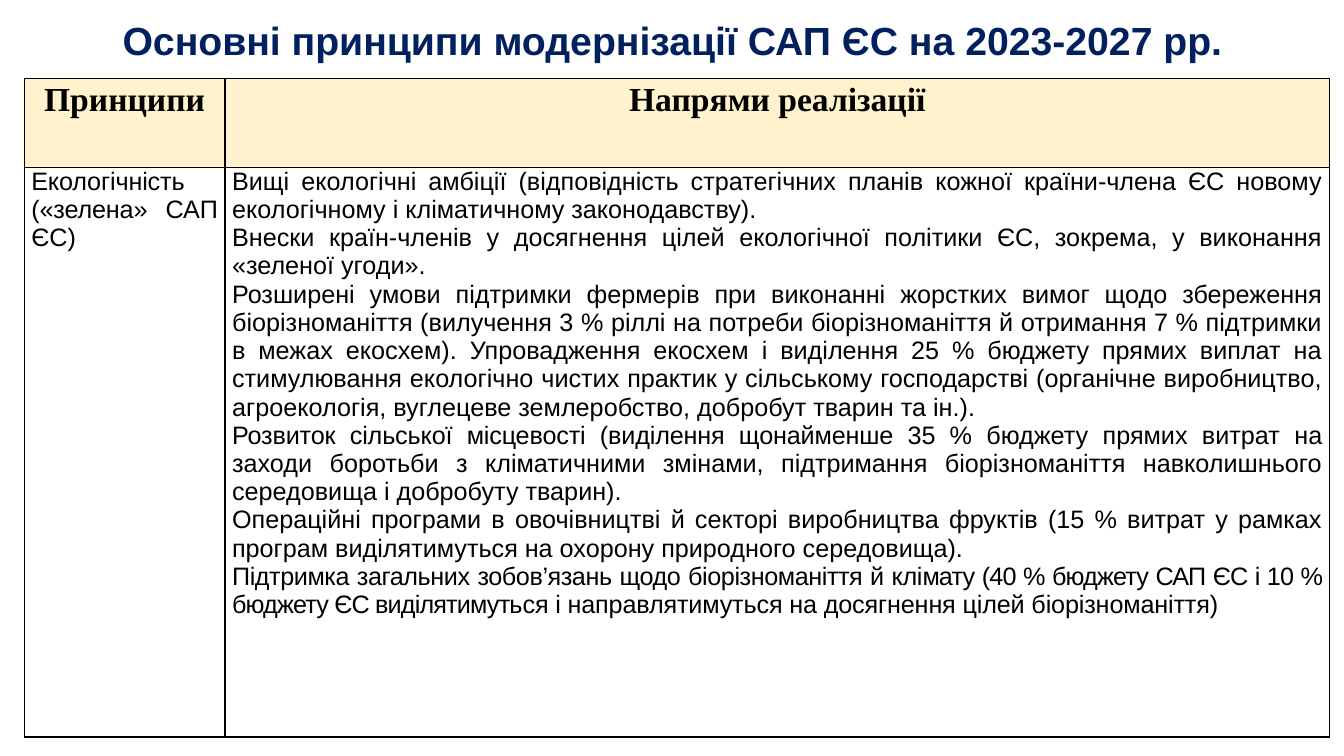
"""Build the slide on the principles of the EU CAP modernisation."""
import pptx
import pptx.dml.color
import pptx.enum.text
import pptx.oxml
import pptx.oxml.ns
import pptx.util
from lxml import etree

Cm = pptx.util.Cm
Pt = pptx.util.Pt
RGBColor = pptx.dml.color.RGBColor
ALIGN = pptx.enum.text.PP_ALIGN
ANCHOR = pptx.enum.text.MSO_ANCHOR

NAVY = RGBColor(0x00, 0x20, 0x60)
BLACK = RGBColor(0x00, 0x00, 0x00)
CREAM = RGBColor(0xFF, 0xF2, 0xCC)
WHITE = RGBColor(0xFF, 0xFF, 0xFF)

TITLE = "Основні принципи модернізації САП ЄС на 2023-2027 рр."
HEADERS = ["Принципи", "Напрями реалізації"]
PRINCIPLE = [[("Екологічність («зелена» ", -0.1), ("САП ЄС)", 0)]]
DIRECTIONS = [
    [("Вищі екологічні амбіції (відповідність стратегічних планів кожної країни-члена ЄС "
      "новому екологічному і кліматичному законодавству).", 0)],
    [("Внески країн-членів у досягнення цілей екологічної політики ЄС, зокрема, "
      "у виконання «зеленої угоди».", 0)],
    [("Розширені умови підтримки фермерів при виконанні жорстких вимог щодо збереження "
      "біорізноманіття (вилучення 3 % ріллі на потреби біорізноманіття й отримання "
      "7 % підтримки в межах екосхем). Упровадження екосхем і виділення 25 % бюджету "
      "прямих виплат на стимулювання екологічно чистих практик у сільському господарстві "
      "(органічне виробництво, агроекологія, вуглецеве землеробство, добробут тварин та ін.).", 0)],
    [("Розвиток сільської місцевості (виділення щонайменше 35 % ", -0.1),
     ("бюджету прямих витрат на заходи боротьби з кліматичними змінами, підтримання "
      "біорізноманіття навколишнього середовища і добробуту тварин).", 0)],
    [("Операційні програми в овочівництві й секторі виробництва фруктів (15 % витрат "
      "у рамках програм виділятимуться на охорону природного середовища).", 0)],
    [("Підтримка загальних зобов’язань щодо біорізноманіття й клі", -0.3),
     ("мату (40 % бюджету САП ЄС і 10 % бюджету ЄС виділятимуть", -0.6),
     ("ся і направлятимуться на досягнення цілей біорізноманіття)", -0.1)],
]


class SlideBuilder:
    def __init__(self, slide):
        self.slide = slide
        self.body_font = "Arial"
        self.header_font = "Times New Roman"
        self.cell_margin = Cm(0.18)

    def add_text(self, frame, paragraphs, font, size, color, bold, align, line=1.0, after=0):
        for index, runs in enumerate(paragraphs):
            paragraph = frame.paragraphs[0] if index == 0 else frame.add_paragraph()
            paragraph.alignment = align
            paragraph.line_spacing = line
            paragraph.space_after = Pt(after)
            for text, tracking in runs:
                run = paragraph.add_run()
                run.text = text
                run.font.name = font
                run.font.size = Pt(size)
                run.font.bold = bold
                run.font.color.rgb = color
                if tracking:
                    run.font._element.set("spc", str(round(tracking * 100)))

    def add_title(self, text, left, top, width, height):
        shape = self.slide.shapes.add_textbox(Cm(left), Cm(top), Cm(width), Cm(height))
        frame = shape.text_frame
        frame.word_wrap = True
        frame.vertical_anchor = ANCHOR.MIDDLE
        self.add_text(frame, [[(text, 0)]], self.body_font, 28, NAVY, True, ALIGN.CENTER, 0.9)

    def add_borders(self, cell):
        properties = cell._tc.get_or_add_tcPr()
        for side in ("lnL", "lnR", "lnT", "lnB"):
            line = etree.SubElement(properties, pptx.oxml.ns.qn(f"a:{side}"), w=str(Pt(1)))
            fill = etree.SubElement(line, pptx.oxml.ns.qn("a:solidFill"))
            etree.SubElement(fill, pptx.oxml.ns.qn("a:srgbClr"), val=str(BLACK))

    def fill_cell(self, cell, paragraphs, is_header):
        cell.margin_left = cell.margin_right = self.cell_margin
        cell.margin_top = cell.margin_bottom = 0
        cell.vertical_anchor = ANCHOR.TOP
        self.add_borders(cell)
        cell.fill.solid()
        cell.fill.fore_color.rgb = CREAM if is_header else WHITE
        if is_header:
            self.add_text(cell.text_frame, paragraphs, self.header_font, 24, BLACK, True,
                          ALIGN.CENTER, 1.07, 8)
        else:
            self.add_text(cell.text_frame, paragraphs, self.body_font, 18, BLACK, False,
                          ALIGN.JUSTIFY)

    def add_table(self, rows, left, top, widths, heights):
        shape = self.slide.shapes.add_table(len(heights), len(widths), Cm(left), Cm(top),
                                            Cm(sum(widths)), Cm(sum(heights)))
        table = shape.table
        table.horz_banding = False
        for column, width in zip(table.columns, widths):
            column.width = Cm(width)
        for row, height in zip(table.rows, heights):
            row.height = Cm(height)
        for row_index, contents in enumerate(rows):
            for column_index, paragraphs in enumerate(contents):
                self.fill_cell(table.cell(row_index, column_index), paragraphs, row_index == 0)


def main():
    presentation = pptx.Presentation()
    presentation.slide_width = Cm(33.87)
    presentation.slide_height = Cm(19.05)
    builder = SlideBuilder(presentation.slides.add_slide(presentation.slide_layouts[6]))
    builder.add_title(TITLE, 2.34, 0.51, 29.21, 1.12)
    header_row = [[[(header, 0)]] for header in HEADERS]
    builder.add_table([header_row, [PRINCIPLE, DIRECTIONS]], 0.61, 1.98,
                      [5.06, 27.84], [2.24, 14.35])
    presentation.save("out.pptx")


if __name__ == "__main__":
    main()
